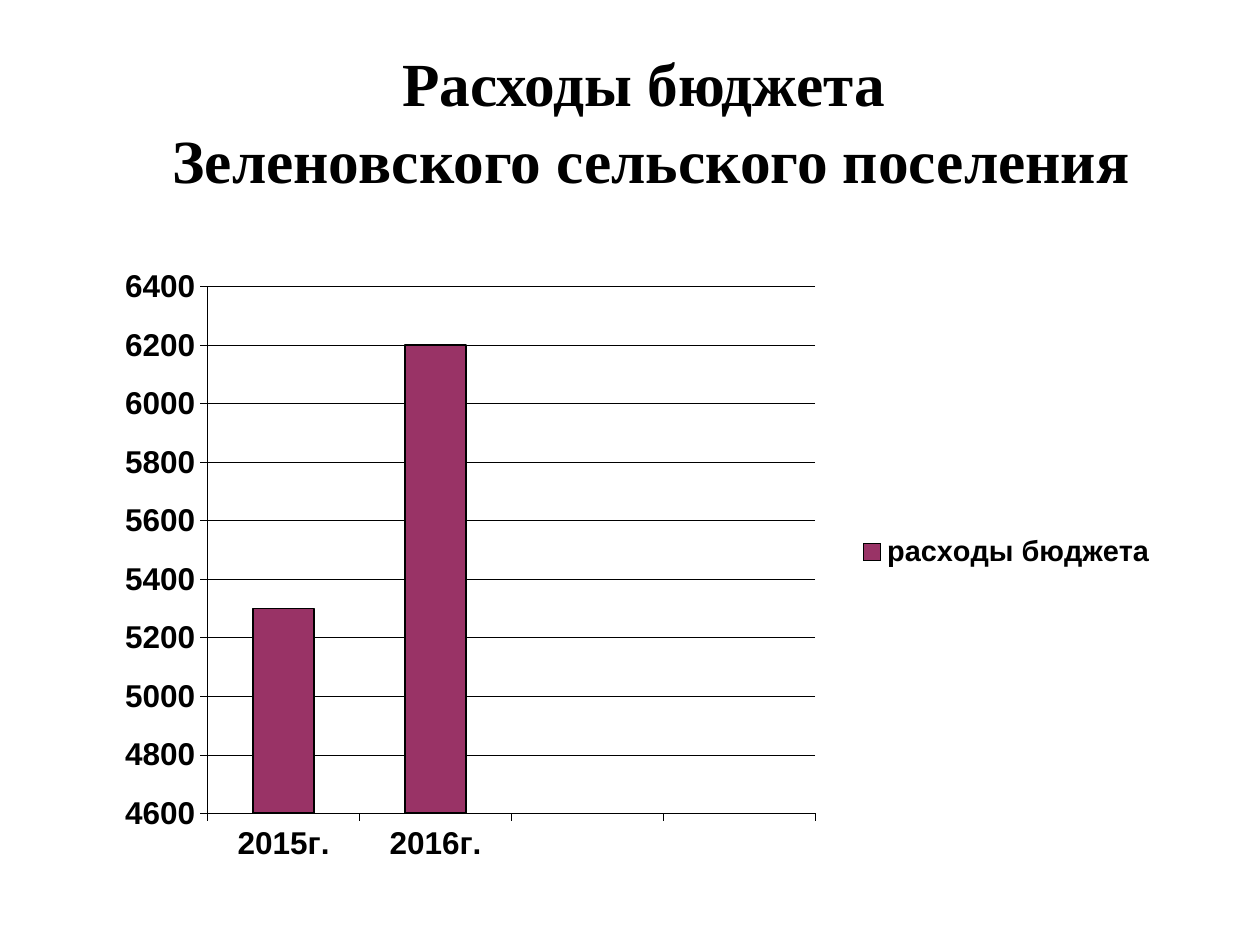
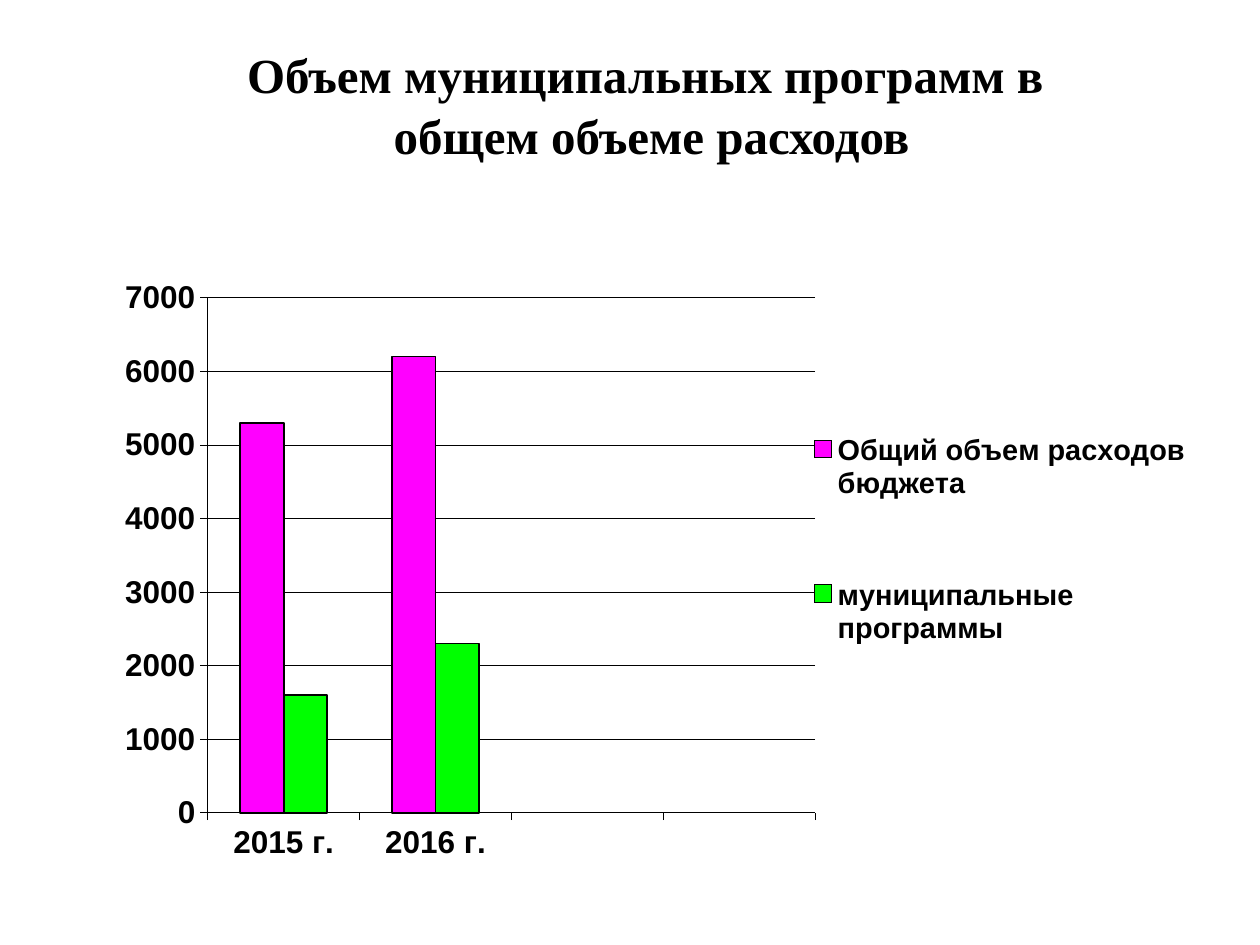
from dataclasses import dataclass

import lxml.etree
import pptx
import pptx.chart.data
import pptx.dml.color
import pptx.enum.chart
import pptx.enum.text
import pptx.oxml.ns
import pptx.util

WIDTH, HEIGHT = pptx.util.Inches(10), pptx.util.Inches(7.5)
BLACK = "000000"
TITLE_FONT, CHART_FONT = "Times New Roman", "Arial"


@dataclass(frozen=True)
class Area:
    """A rectangle in shares of whatever contains it."""
    left: float
    top: float
    width: float
    height: float

    def on_slide(self) -> tuple[int, int, int, int]:
        return (int(self.left * WIDTH), int(self.top * HEIGHT),
                int(self.width * WIDTH), int(self.height * HEIGHT))


@dataclass(frozen=True)
class Series:
    name: str
    values: tuple[int | None, ...]
    colour: str


@dataclass(frozen=True)
class BudgetSlide:
    title: tuple[str, str]
    title_size: float
    years: tuple[str, ...]
    series: tuple[Series, ...]
    scale: tuple[int, int, int]  # lowest, highest, step
    chart_area: Area
    plot_area: Area
    legend_area: Area


TITLE_AREA = Area(0.067, 0.033, 0.9, 0.167)
TOTAL_EXPENSES = (5300, 6200, None, None)

SLIDES = (
    BudgetSlide(
        ("Расходы бюджета ", "Зеленовского сельского поселения"), 35,
        ("2015г.", "2016г.", "", ""),
        (Series("расходы бюджета", TOTAL_EXPENSES, "993366"),),
        (4600, 6400, 200),
        Area(0.058, 0.277, 0.898, 0.668),
        Area(0.119, 0.039, 0.537, 0.835),
        Area(0.66, 0.42, 0.33, 0.08),
    ),
    BudgetSlide(
        ("Объем муниципальных программ в ", "общем объеме расходов"), 28,
        ("2015 г.", "2016 г.", "", ""),
        (Series("Общий объем расходов бюджета", TOTAL_EXPENSES, "FF00FF"),
         Series("муниципальные программы", (1600, 2300, None, None), "00FF00")),
        (0, 7000, 1000),
        Area(0.058, 0.284, 0.898, 0.66),
        Area(0.119, 0.047, 0.537, 0.826),
        Area(0.66, 0.14, 0.33, 0.59),
    ),
)


def rgb(colour: str) -> pptx.dml.color.RGBColor:
    return pptx.dml.color.RGBColor.from_string(colour)


def style_font(font, name: str, size: float) -> None:
    font.name, font.size, font.bold = name, pptx.util.Pt(size), True
    font.color.rgb = rgb(BLACK)


def style_line(line, points: float) -> None:
    line.color.rgb = rgb(BLACK)
    line.width = pptx.util.Pt(points)


def add_title(page, lines: tuple[str, str], size: float) -> None:
    frame = page.shapes.add_textbox(*TITLE_AREA.on_slide()).text_frame
    frame.word_wrap = True
    frame.margin_top = pptx.util.Inches(0.08)
    frame.vertical_anchor = pptx.enum.text.MSO_ANCHOR.TOP
    frame.text = "\n".join(lines)
    for para in frame.paragraphs:
        para.alignment = pptx.enum.text.PP_ALIGN.CENTER
        para.line_spacing = 1.05
        style_font(para.font, TITLE_FONT, size)


def place_part(part, area: Area, index: int, inner: bool = False) -> None:
    """Give a chart part a manual layout, as its child number index."""
    tag = pptx.oxml.ns.qn
    for old_layout in part.findall(tag("c:layout")):
        part.remove(old_layout)
    layout = part.makeelement(tag("c:layout"))
    manual = lxml.etree.SubElement(layout, tag("c:manualLayout"))
    settings = {"layoutTarget": "inner"} if inner else {}
    settings |= {"xMode": "edge", "yMode": "edge", "x": area.left,
                 "y": area.top, "w": area.width, "h": area.height}
    for name, value in settings.items():
        lxml.etree.SubElement(manual, tag(f"c:{name}")).set("val", str(value))
    part.insert(index, layout)


def style_axes(chart, scale: tuple[int, int, int]) -> None:
    for axis in (chart.category_axis, chart.value_axis):
        axis.major_tick_mark = pptx.enum.chart.XL_TICK_MARK.OUTSIDE
        style_line(axis.format.line, 0.25)
        style_font(axis.tick_labels.font, CHART_FONT, 18)
    chart.category_axis.tick_label_position = pptx.enum.chart.XL_TICK_LABEL_POSITION.LOW
    values = chart.value_axis
    values.minimum_scale, values.maximum_scale, values.major_unit = scale
    values.has_major_gridlines = True
    style_line(values.major_gridlines.format.line, 0.25)


def add_column_chart(page, content: BudgetSlide) -> None:
    data = pptx.chart.data.CategoryChartData()
    data.categories = content.years
    for series in content.series:
        data.add_series(series.name, series.values)
    chart = page.shapes.add_chart(
        pptx.enum.chart.XL_CHART_TYPE.COLUMN_CLUSTERED,
        *content.chart_area.on_slide(), data).chart
    chart.has_title = False
    style_font(chart.font, CHART_FONT, 18)
    style_axes(chart, content.scale)

    plot = chart.plots[0]
    plot.gap_width, plot.overlap, plot.vary_by_categories = 150, 0, False
    for bars, series in zip(plot.series, content.series):
        bars.format.fill.solid()
        bars.format.fill.fore_color.rgb = rgb(series.colour)
        style_line(bars.format.line, 1)

    chart.has_legend = True
    chart.legend.position = pptx.enum.chart.XL_LEGEND_POSITION.RIGHT
    chart.legend.include_in_layout = False
    style_font(chart.legend.font, CHART_FONT, 16.5)

    find = chart.element.find
    place_part(find(".//" + pptx.oxml.ns.qn("c:plotArea")), content.plot_area, 0, inner=True)
    place_part(find(".//" + pptx.oxml.ns.qn("c:legend")), content.legend_area, 1)


def main() -> None:
    deck = pptx.Presentation()
    deck.slide_width, deck.slide_height = WIDTH, HEIGHT
    for content in SLIDES:
        page = deck.slides.add_slide(deck.slide_layouts[6])
        add_title(page, content.title, content.title_size)
        add_column_chart(page, content)
    deck.save("out.pptx")


if __name__ == "__main__":
    main()
